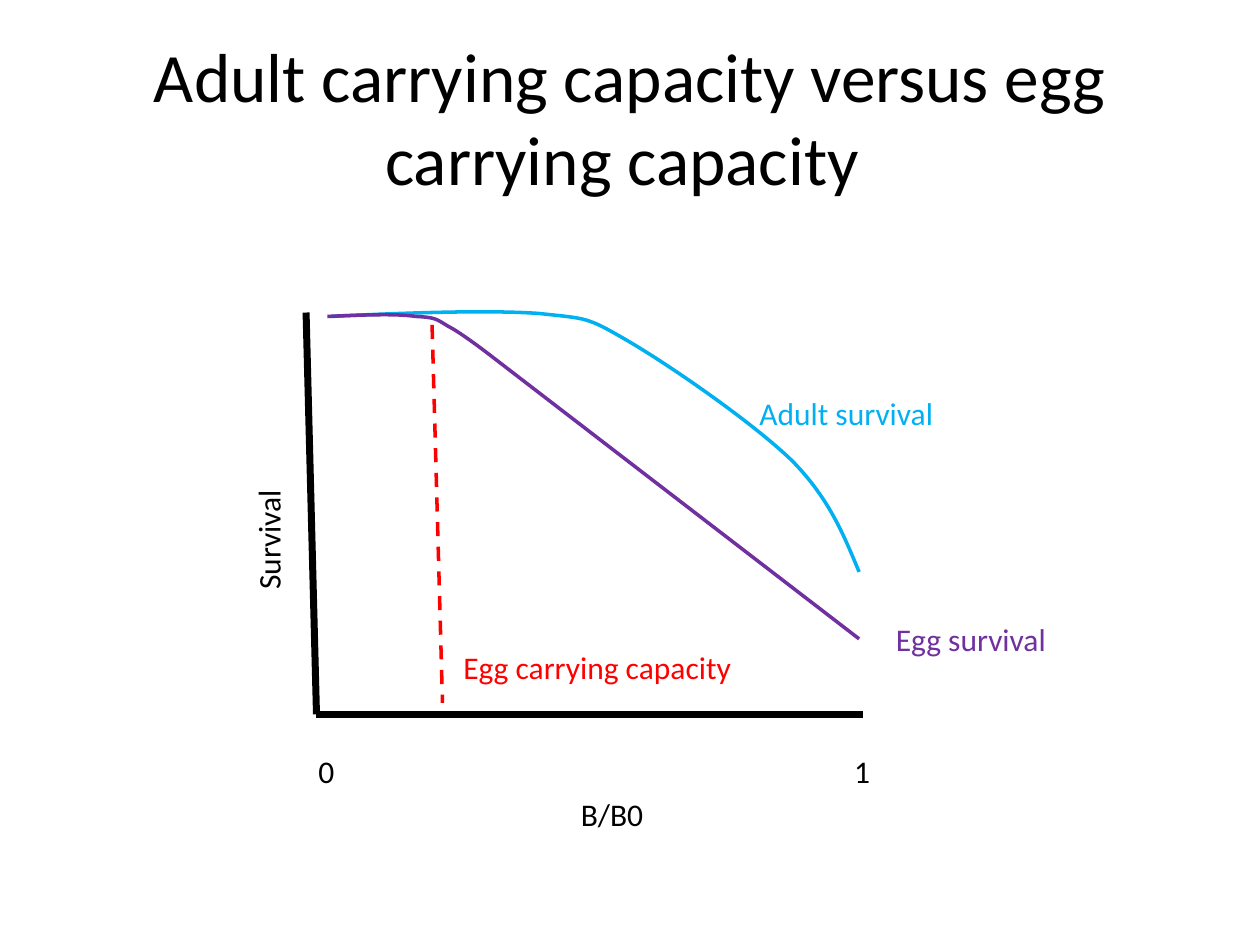
from dataclasses import dataclass
from typing import Optional

from lxml.etree import SubElement
from pptx import Presentation
from pptx.dml.color import RGBColor
from pptx.enum.dml import MSO_LINE_DASH_STYLE as Dash
from pptx.enum.shapes import MSO_CONNECTOR as Connector
from pptx.enum.text import MSO_ANCHOR as Anchor, MSO_AUTO_SIZE as AutoSize, PP_ALIGN as Align
from pptx.oxml.ns import qn
from pptx.slide import Slide
from pptx.util import Cm, Pt

Point = tuple[float, float]


@dataclass(frozen=True)
class Theme:
    """Colours, font and sizes of the slide."""
    black: str = "000000"
    adult: str = "00B0F0"
    egg: str = "7030A0"
    capacity: str = "FF0000"
    font: str = "Calibri"
    title_size: float = 39.6
    label_size: float = 18
    axis_width: float = 4
    curve_width: float = 2


THEME = Theme()


@dataclass(frozen=True)
class Label:
    """Text in a box, with lengths in centimetres."""
    text: str
    left: float
    top: float
    width: float
    colour: str = THEME.black
    rotation: float = 0
    height: float = 1.02


@dataclass(frozen=True)
class Line:
    """Straight line between two points in centimetres."""
    start: Point
    end: Point
    colour: str = THEME.black
    width: float = THEME.axis_width
    dash: Optional[Dash] = None


@dataclass(frozen=True)
class Curve:
    """Start point followed by triples of Bezier points, in centimetres."""
    colour: str
    points: tuple[Point, ...]


TITLE = Label("Adult carrying capacity versus egg carrying capacity ", 1.27, 0.76, 22.86, height=3.18)
ORIGIN = (6.38, 14.4)
TICK_TOP = 15.04
AXES = (Line((6.17, 6.3), ORIGIN), Line(ORIGIN, (17.4, 14.4)))
AXIS_LABELS = (
    Label("0", 6.17, TICK_TOP, 0.84),
    Label("1", 16.97, TICK_TOP, 0.84),
    Label("B/B0", 11.46, 15.9, 1.78),
    Label("Survival", 4.14, 10.36, 2.54, rotation=270),
)
ADULT_CURVE = Curve(THEME.adult, (
    (6.68, 6.38),
    (8.28, 6.3), (9.88, 6.25), (10.87, 6.32),
    (11.86, 6.43), (11.81, 6.38), (12.67, 6.88),
    (13.51, 7.37), (15.19, 8.53), (15.98, 9.3),
    (16.74, 10.08), (17.02, 10.82), (17.32, 11.53),
))
ADULT_LABEL = Label("Adult survival", 15.06, 7.82, 4.06, THEME.adult)
EGG_BEND, EGG_END = (9.88, 7.16), (17.32, 12.88)
EGG_CURVE = Curve(THEME.egg, (
    (6.6, 6.38),
    (7.29, 6.35), (7.98, 6.32), (8.38, 6.38),
    (8.79, 6.4), (8.79, 6.43), (9.04, 6.58),
    (9.3, 6.71), EGG_BEND, EGG_BEND,
    EGG_BEND, EGG_END, EGG_END,
))
EGG_LABEL = Label("Egg survival", 17.81, 12.37, 3.58, THEME.egg)
CAPACITY_LINE = Line((8.71, 6.55), (8.92, 14.17), THEME.capacity, THEME.curve_width, Dash.DASH)
CAPACITY_LABEL = Label("Egg carrying capacity", 9.09, 12.93, 5.97, THEME.capacity)


def draw_label(slide: Slide, label: Label, size: float = THEME.label_size, is_title: bool = False) -> None:
    """Draw a label, wrapped and centred if it is the title."""
    box = slide.shapes.add_textbox(Cm(label.left), Cm(label.top), Cm(label.width), Cm(label.height))
    box.rotation = label.rotation
    frame = box.text_frame
    frame.word_wrap = is_title
    frame.auto_size = AutoSize.NONE if is_title else AutoSize.SHAPE_TO_FIT_TEXT
    frame.vertical_anchor = Anchor.MIDDLE if is_title else Anchor.TOP
    paragraph = frame.paragraphs[0]
    paragraph.alignment = Align.CENTER if is_title else Align.LEFT
    run = paragraph.add_run()
    run.text = label.text
    run.font.name = THEME.font
    run.font.size = Pt(size)
    run.font.color.rgb = RGBColor.from_string(label.colour)


def draw_line(slide: Slide, line: Line) -> None:
    """Draw a straight line without shadow."""
    ends = (Cm(value) for value in (*line.start, *line.end))
    connector = slide.shapes.add_connector(Connector.STRAIGHT, *ends)
    connector.line.color.rgb = RGBColor.from_string(line.colour)
    connector.line.width = Pt(line.width)
    if line.dash is not None:
        connector.line.dash_style = line.dash
    SubElement(connector.element.spPr, qn("a:effectLst"))


def draw_curve(slide: Slide, curve: Curve) -> None:
    """Draw an open freeform and turn its segments into Bezier triples."""
    start, *rest = [(Cm(x), Cm(y)) for x, y in curve.points]
    builder = slide.shapes.build_freeform(*start)
    builder.add_line_segments(rest, close=False)
    shape = builder.convert_to_shape()
    shape.shadow.inherit = False
    shape.fill.background()
    shape.line.color.rgb = RGBColor.from_string(curve.colour)
    shape.line.width = Pt(THEME.curve_width)
    segments = list(shape.element.iter(qn("a:lnTo")))
    outline = segments[0].getparent()
    for first in range(0, len(segments), 3):
        bezier = SubElement(outline, qn("a:cubicBezTo"))
        for segment in segments[first:first + 3]:
            bezier.append(segment[0])
            outline.remove(segment)


def main() -> None:
    """Build and save the slide."""
    deck = Presentation()
    deck.slide_width, deck.slide_height = Cm(25.4), Cm(19.05)
    slide = deck.slides.add_slide(deck.slide_layouts[6])
    draw_label(slide, TITLE, THEME.title_size, is_title=True)
    for axis in AXES:
        draw_line(slide, axis)
    for label in AXIS_LABELS:
        draw_label(slide, label)
    draw_curve(slide, ADULT_CURVE)
    draw_label(slide, ADULT_LABEL)
    draw_curve(slide, EGG_CURVE)
    draw_label(slide, EGG_LABEL)
    draw_line(slide, CAPACITY_LINE)
    draw_label(slide, CAPACITY_LABEL)
    deck.save("out.pptx")


if __name__ == "__main__":
    main()
